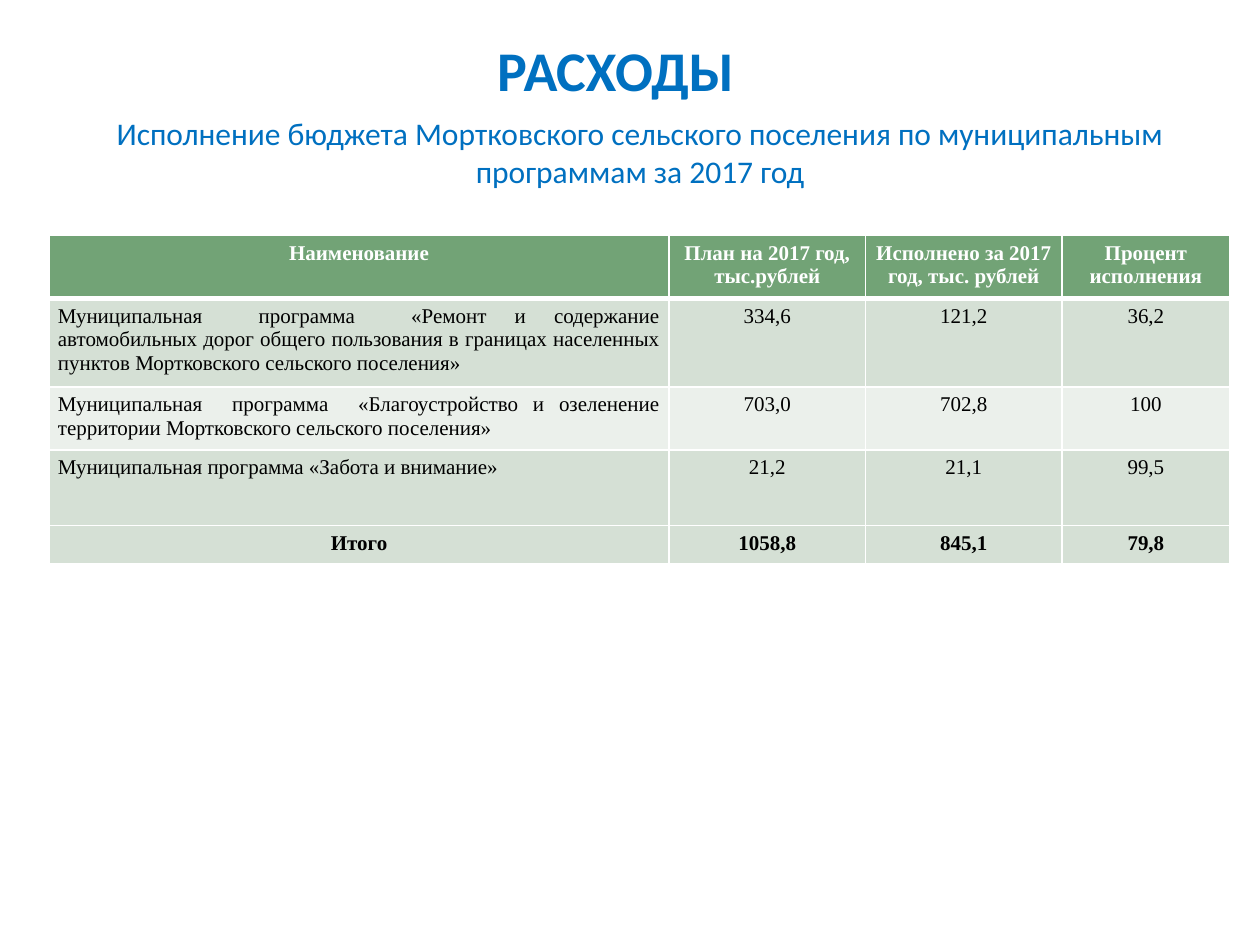
from dataclasses import dataclass

from lxml import etree
from pptx import Presentation
from pptx.dml.color import RGBColor
from pptx.enum.text import MSO_ANCHOR as Anchor, PP_ALIGN as Align
from pptx.oxml.ns import qn
from pptx.util import Inches, Pt


@dataclass(frozen=True)
class Theme:
    heading_font: str = "Calibri"
    table_font: str = "Times New Roman"
    blue: str = "0070C0"
    green: str = "72A376"
    band_dark: str = "D5E0D5"
    band_light: str = "EBF0EB"
    white: str = "FFFFFF"
    black: str = "000000"
    title_size: int = 32
    subtitle_size: int = 18
    table_size: int = 12
    thin_line: float = 0.96
    thick_line: float = 3


HEADER = ["Наименование", "План на 2017 год,\nтыс.рублей",
          "Исполнено за 2017 год, тыс. рублей", "Процент исполнения"]
PROGRAMS = [
    ["Муниципальная  программа  «Ремонт и содержание автомобильных дорог общего "
     "пользования в границах населенных пунктов Мортковского сельского поселения»",
     "334,6", "121,2", "36,2"],
    ["Муниципальная  программа  «Благоустройство и озеленение территории "
     "Мортковского сельского поселения»", "703,0", "702,8", "100"],
    ["Муниципальная программа «Забота и внимание»", "21,2", "21,1", "99,5"],
]
TOTAL = ["Итого", "1058,8", "845,1", "79,8"]
COLUMN_WIDTHS = [4.92, 1.56, 1.56, 1.33]
ROW_HEIGHTS = [0.46, 0.66, 0.47, 0.6, 0.28]


class SlideBuilder:
    def __init__(self, page, theme):
        self.page = page
        self.theme = theme

    def style_text(self, frame, font, size, color, bold=False, align=Align.CENTER):
        for para in frame.paragraphs:
            para.alignment = align
            for span in para.runs:
                span.font.name = font
                span.font.size = Pt(size)
                span.font.bold = bold
                span.font.color.rgb = RGBColor.from_string(color)

    def heading(self, text, left, top, width, height, size, bold=False):
        box = self.page.shapes.add_textbox(
            Inches(left), Inches(top), Inches(width), Inches(height))
        frame = box.text_frame
        frame.word_wrap = True
        frame.vertical_anchor = Anchor.TOP
        frame.text = text
        self.style_text(frame, self.theme.heading_font, size, self.theme.blue, bold)

    def borders(self, cell, top, bottom):
        properties = cell._tc.get_or_add_tcPr()
        thin = self.theme.thin_line
        sides = {"lnL": thin, "lnR": thin, "lnT": top, "lnB": bottom}
        for position, (side, width) in enumerate(sides.items()):
            line = etree.Element(qn(f"a:{side}"), w=str(Pt(width)))
            fill = etree.SubElement(line, qn("a:solidFill"))
            etree.SubElement(fill, qn("a:srgbClr"), val=self.theme.white)
            properties.insert(position, line)

    def cell(self, cell, text, fill, color, bold, align, top, bottom):
        cell.margin_left = cell.margin_right = Inches(0.07)
        cell.margin_top = cell.margin_bottom = Inches(0.05)
        cell.text_frame.text = text
        self.style_text(cell.text_frame, self.theme.table_font,
                        self.theme.table_size, color, bold, align)
        cell.fill.solid()
        cell.fill.fore_color.rgb = RGBColor.from_string(fill)
        self.borders(cell, top, bottom)

    def budget_table(self, left, top, header, programs, total):
        theme = self.theme
        rows = [header, *programs, total]
        table = self.page.shapes.add_table(
            len(rows), len(header), Inches(left), Inches(top),
            Inches(sum(COLUMN_WIDTHS)), Inches(sum(ROW_HEIGHTS))).table
        for column, width in zip(table.columns, COLUMN_WIDTHS):
            column.width = Inches(width)
        for row, height in zip(table.rows, ROW_HEIGHTS):
            row.height = Inches(height)

        last = len(rows) - 1
        for r, values in enumerate(rows):
            is_header, is_total = r == 0, r == last
            band = theme.band_dark if r % 2 or is_total else theme.band_light
            for c, text in enumerate(values):
                is_name = c == 0 and not (is_header or is_total)
                self.cell(
                    table.cell(r, c), text,
                    fill=theme.green if is_header else band,
                    color=theme.white if is_header else theme.black,
                    bold=is_header or is_total,
                    align=Align.JUSTIFY if is_name else Align.CENTER,
                    top=theme.thick_line if r == 1 else theme.thin_line,
                    bottom=theme.thick_line if is_header else theme.thin_line)


def main():
    deck = Presentation()
    deck.slide_width, deck.slide_height = Inches(10), Inches(7.5)
    theme = Theme()
    builder = SlideBuilder(deck.slides.add_slide(deck.slide_layouts[6]), theme)

    # Headings
    builder.heading("РАСХОДЫ", 1.02, 0.23, 7.73, 0.63, theme.title_size, bold=True)
    builder.heading("Исполнение бюджета Мортковского сельского поселения "
                    "по муниципальным программам за 2017 год",
                    0.47, 0.86, 9.22, 0.33, theme.subtitle_size)

    # Spending by program
    builder.budget_table(0.39, 1.87, HEADER, PROGRAMS, TOTAL)

    deck.save("out.pptx")


if __name__ == "__main__":
    main()
